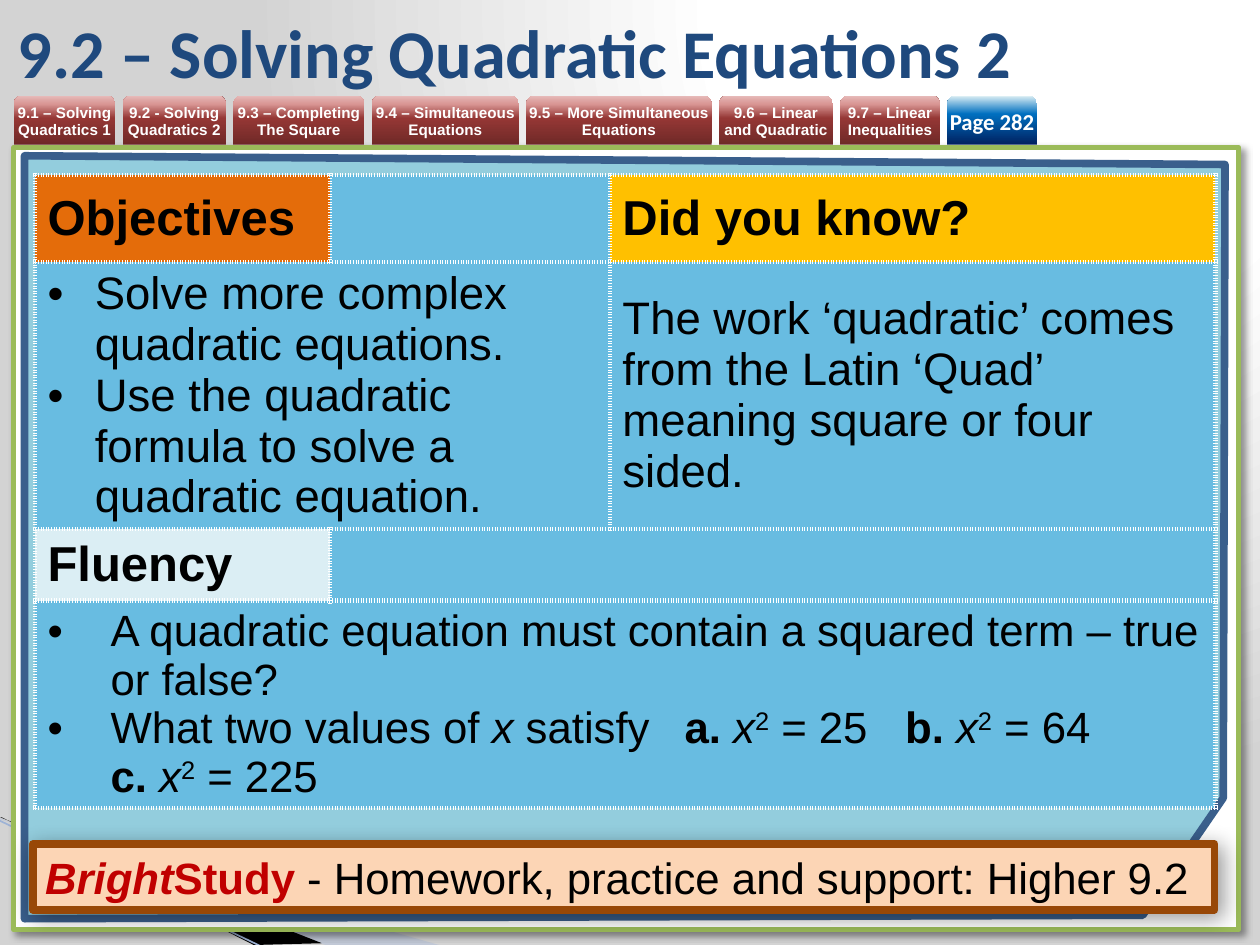
from dataclasses import dataclass
from lxml import etree
from pptx import Presentation
from pptx import util as u
from pptx.dml.color import RGBColor
from pptx.enum import shapes, text
from pptx.oxml import parse_xml
from pptx.oxml.ns import nsdecls, qn

Pt = u.Pt


@dataclass(frozen=True)
class Theme:
    heading: str = "Calibri"
    body: str = "Arial"
    navy: str = "1F497D"
    white: str = "FFFFFF"
    black: str = "000000"
    panel: str = "93CDDD"
    panel_line: str = "3A5F8C"
    frame: str = "9BBB59"
    cell: str = "68BCE1"
    objectives: str = "E46C0A"
    fact: str = "FFC000"
    fluency: str = "DBEEF4"
    bar: str = "FCD5B5"
    bar_line: str = "984807"
    accent: str = "C00000"
    swoosh: str = "A7B9DB"
    swoosh_line: str = "9EB3D6"
    backdrop: tuple = ((0, "FFFFFF"), (40, "FFFFFF"), (100, "D3D3D3"))
    red_tab: tuple = ((0, "6F2927"), (54, "953735"), (83, "D99694"), (100, "E6B9B8"))
    blue_tab: tuple = ((0, "002060"), (63, "0070C0"), (100, "DBEEF4"))
    title_size: float = 39
    head_size: float = 28
    text_size: float = 26
    task_size: float = 25
    tab_size: float = 8.7
    page_size: float = 13


T = Theme()
UPWARD = '<a:lin ang="16200000" scaled="0"/>'
TOP_RIGHT = '<a:path path="circle"><a:fillToRect l="65000" t="0" r="0" b="98000"/></a:path>'


def rgb(color):
    return RGBColor.from_string(color)


def gradient(stops, direction):
    gs = "".join(f'<a:gs pos="{pos * 1000}"><a:srgbClr val="{c}"/></a:gs>' for pos, c in stops)
    return parse_xml(f'<a:gradFill {nsdecls("a")} rotWithShape="1"><a:gsLst>{gs}</a:gsLst>'
                     f'{direction}</a:gradFill>')


def paint(sp, fill, line=None, width=0):
    sp.shadow.inherit = False
    sp.fill.solid()
    sp.fill.fore_color.rgb = rgb(fill)
    if line:
        sp.line.color.rgb = rgb(line)
        sp.line.width = Pt(width)
    else:
        sp.line.fill.background()


def cast_shadow(sp, blur):
    effects = sp._element.spPr.find(qn("a:effectLst"))
    effects.append(parse_xml(
        f'<a:outerShdw {nsdecls("a")} blurRad="{Pt(blur)}" dist="{Pt(3)}" dir="2700000" '
        f'algn="tl" rotWithShape="0"><a:srgbClr val="{T.black}"><a:alpha val="40000"/>'
        '</a:srgbClr></a:outerShdw>'))


def add_run(p, txt, size, color=T.black, marks="", font=T.body):
    r = p.add_run()
    r.text = txt
    r.font.name, r.font.size, r.font.color.rgb = font, Pt(size), rgb(color)
    r.font.bold, r.font.italic = "b" in marks, "i" in marks
    if "^" in marks:
        r._r.get_or_add_rPr().set("baseline", "30000")


def add_box(s, x, y, w, h, fill, line, width, blur):
    sp = s.shapes.add_shape(shapes.MSO_SHAPE.RECTANGLE, Pt(x), Pt(y), Pt(w), Pt(h))
    paint(sp, fill, line, width)
    cast_shadow(sp, blur)
    return sp


def add_outline(s, points, fill, line=None, width=0, close=True):
    builder = s.shapes.build_freeform(*points[0], scale=Pt(1))
    builder.add_line_segments(points[1:], close=close)
    sp = builder.convert_to_shape()
    paint(sp, fill, line, width)
    return sp


def add_tab(s, x, w, label, stops, size, font, spacing=None):
    sp = s.shapes.add_shape(shapes.MSO_SHAPE.ROUND_2_SAME_RECTANGLE, Pt(x), Pt(54.7), Pt(w), Pt(28))
    paint(sp, T.white)
    solid = sp._element.spPr.find(qn("a:solidFill"))
    solid.getparent().replace(solid, gradient(stops, UPWARD))
    tf = sp.text_frame
    tf.word_wrap = True
    tf.vertical_anchor = text.MSO_ANCHOR.MIDDLE
    tf.margin_left = tf.margin_right = tf.margin_top = tf.margin_bottom = 0
    p = tf.paragraphs[0]
    p.alignment = text.PP_ALIGN.CENTER
    if spacing:
        p.line_spacing = Pt(spacing)
    add_run(p, label, size, T.white, "b", font)


def style_cell(cell, fill):
    tcPr = cell._tc.get_or_add_tcPr()
    for side in "LRTB":
        tcPr.append(parse_xml(
            f'<a:ln{side} {nsdecls("a")} w="{Pt(3)}"><a:solidFill><a:srgbClr val="{T.white}"/>'
            f'</a:solidFill><a:prstDash val="sysDot"/></a:ln{side}>'))
    cell.fill.solid()
    cell.fill.fore_color.rgb = rgb(fill)
    cell.vertical_anchor = text.MSO_ANCHOR.MIDDLE


def add_bullets(cell, indent, items, size, tabs=()):
    tf = cell.text_frame
    for i, runs in enumerate(items):
        p = tf.add_paragraph() if i else tf.paragraphs[0]
        pPr = p._p.get_or_add_pPr()
        pPr.set("marL", str(Pt(indent)))
        pPr.set("indent", str(-Pt(indent)))
        etree.SubElement(pPr, qn("a:buFont"), typeface=T.body)
        etree.SubElement(pPr, qn("a:buChar"), char="•")
        if tabs:
            stops = etree.SubElement(pPr, qn("a:tabLst"))
            for pos in tabs:
                etree.SubElement(stops, qn("a:tab"), pos=str(Pt(pos)), algn="l")
        for txt, marks in runs:
            if txt == "\n":
                p.add_line_break()
            else:
                add_run(p, txt, size, marks=marks)


def equation(letter, value):
    return [(f"{letter}. ", "b"), ("x", "i"), ("2", "^"), (f" = {value}", "")]


def add_lesson_table(s):
    cols, rows = (168.5, 160, 346), (49.7, 152, 41, 118)
    frame = s.shapes.add_table(4, 3, Pt(20), Pt(100), Pt(sum(cols)), Pt(sum(rows)))
    tbl = frame.table
    tbl.first_row = tbl.horz_banding = False
    for col, w in zip(tbl.columns, cols):
        col.width = Pt(w)
    for row, h in zip(tbl.rows, rows):
        row.height = Pt(h)
    heads = {(0, 0): ("Objectives", T.objectives), (0, 2): ("Did you know?", T.fact),
             (2, 0): ("Fluency", T.fluency)}
    for r in range(4):
        for c in range(3):
            label, fill = heads.get((r, c), ("", T.cell))
            style_cell(tbl.cell(r, c), fill)
            if label:
                add_run(tbl.cell(r, c).text_frame.paragraphs[0], label, T.head_size, marks="b")
    for first, last in (((1, 0), (1, 1)), ((2, 1), (2, 2)), ((3, 0), (3, 2))):
        tbl.cell(*first).merge(tbl.cell(*last))
    add_bullets(tbl.cell(1, 0), 27, [
        [("Solve more complex quadratic equations.", "")],
        [("Use the quadratic formula to solve a quadratic equation.", "")]], T.text_size)
    add_run(tbl.cell(1, 2).text_frame.paragraphs[0],
            "The work ‘quadratic’ comes from the Latin ‘Quad’ meaning square or four sided.",
            T.text_size)
    add_bullets(tbl.cell(3, 0), 36, [
        [("A quadratic equation must contain a squared term – true or false?", "")],
        [("What two values of ", ""), ("x", "i"), (" satisfy\t", ""), *equation("a", 25),
         ("\t", ""), *equation("b", 64), ("\n", ""), *equation("c", 225)]],
        T.task_size, tabs=(364, 490))


def add_backdrop(s):
    s.background.fill.solid()
    solid = s._element.cSld.bg.bgPr.find(qn("a:solidFill"))
    solid.getparent().replace(solid, gradient(T.backdrop, TOP_RIGHT))
    swoosh = add_outline(s, [(-0.7, 468), (251.3, 540), (186.5, 540), (-0.7, 467.3)], T.swoosh)
    color = swoosh._element.spPr.find(qn("a:solidFill"))[0]
    etree.SubElement(color, qn("a:alpha"), val="40000")
    add_outline(s, [(0, 466.6), (184.3, 539.3), (145.4, 540), (0.7, 467.3)], T.black)
    line = s.shapes.add_connector(shapes.MSO_CONNECTOR.STRAIGHT,
                                  Pt(-0.7), Pt(468.7), Pt(150.5), Pt(541.4))
    line.line.color.rgb, line.line.width = rgb(T.swoosh_line), Pt(0.95)
    etree.SubElement(line._element.spPr, qn("a:effectLst"))
    add_box(s, 7.9, 84.2, 700, 447, T.white, T.frame, 3, 4)
    add_outline(s, [(14.4, 89.3), (699.8, 93.6), (699.1, 455.8), (653, 523.4), (14.4, 524.9)],
                T.panel, T.panel_line, 4.33)


def add_title(s, label):
    title = s.shapes.title
    title.left, title.top, title.width, title.height = Pt(2.9), Pt(3.6), Pt(595.5), Pt(51)
    tf = title.text_frame
    tf.auto_size = text.MSO_AUTO_SIZE.NONE
    tf.vertical_anchor = text.MSO_ANCHOR.MIDDLE
    p = tf.paragraphs[0]
    p.alignment = text.PP_ALIGN.LEFT
    add_run(p, label, T.title_size, T.navy, "b", T.heading)


def add_tabs(s):
    x, gap = 7.9, 4.2
    for label, w in (("9.1 – Solving Quadratics 1", 58), ("9.2 - Solving Quadratics 2", 59),
                     ("9.3 – Completing The Square", 75), ("9.4 – Simultaneous Equations", 84),
                     ("9.5 – More Simultaneous Equations", 106),
                     ("9.6 – Linear and Quadratic", 65), ("9.7 – Linear Inequalities", 57)):
        add_tab(s, x, w, label, T.red_tab, T.tab_size, T.body, 10)
        x += w + gap
    add_tab(s, x, 51.2, "Page 282", T.blue_tab, T.page_size, T.heading)


def add_homework_bar(s):
    sp = add_box(s, 18.7, 482.4, 675.4, 37.5, T.bar, T.bar_line, 4.33, 13)
    sp.text_frame.word_wrap = True
    sp.text_frame.vertical_anchor = text.MSO_ANCHOR.MIDDLE
    p = sp.text_frame.paragraphs[0]
    p.alignment = text.PP_ALIGN.LEFT
    add_run(p, "Bright", T.task_size, T.accent, "bi")
    add_run(p, "Study ", T.task_size, T.accent, "b")
    add_run(p, "- Homework, practice and support: Higher 9.2", T.task_size)


def main():
    prs = Presentation()
    prs.slide_width, prs.slide_height = Pt(720), Pt(540)
    s = prs.slides.add_slide(prs.slide_layouts[5])
    add_backdrop(s)
    add_title(s, "9.2 – Solving Quadratic Equations 2")
    add_tabs(s)
    add_lesson_table(s)
    add_homework_bar(s)
    prs.save("out.pptx")


if __name__ == "__main__":
    main()
